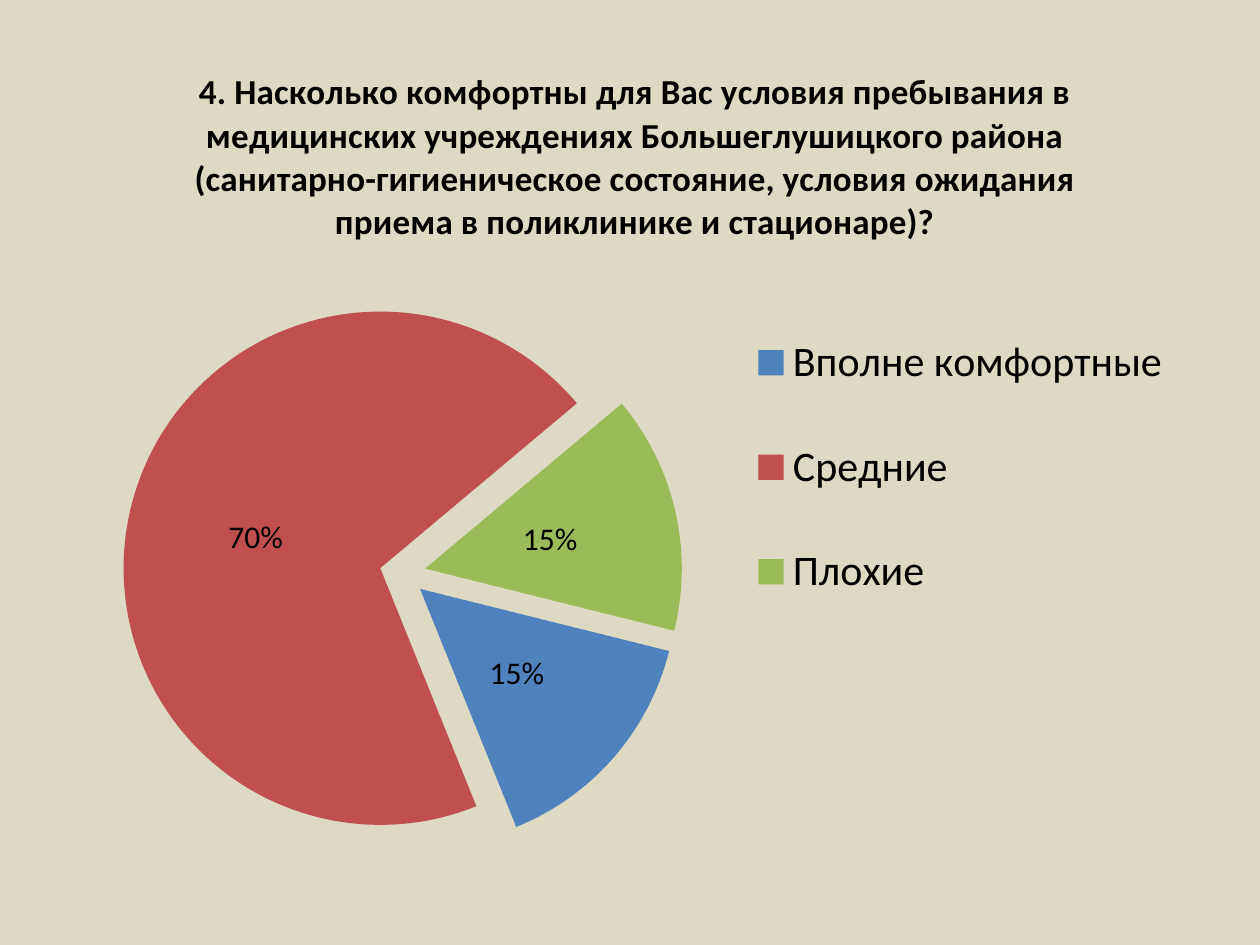
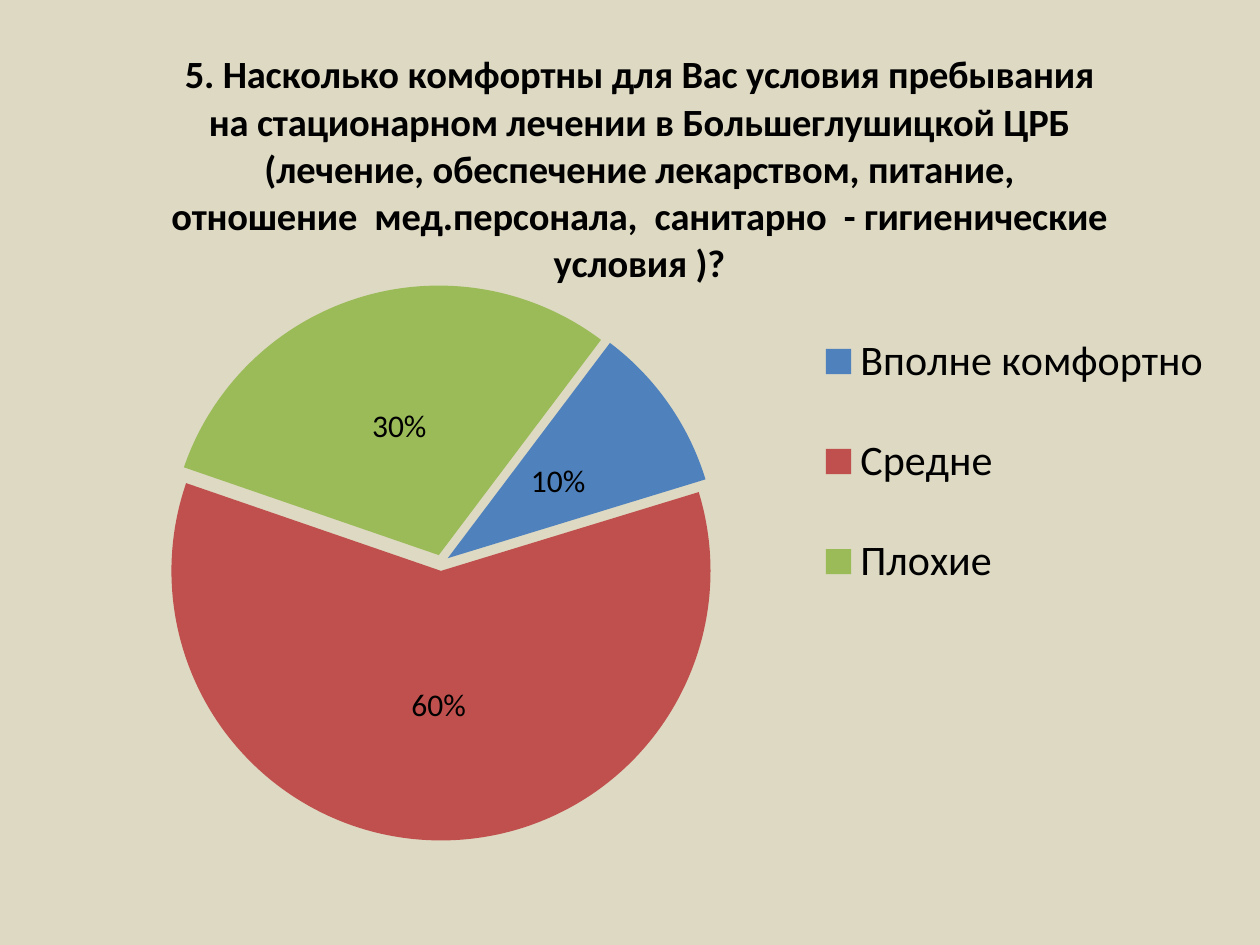
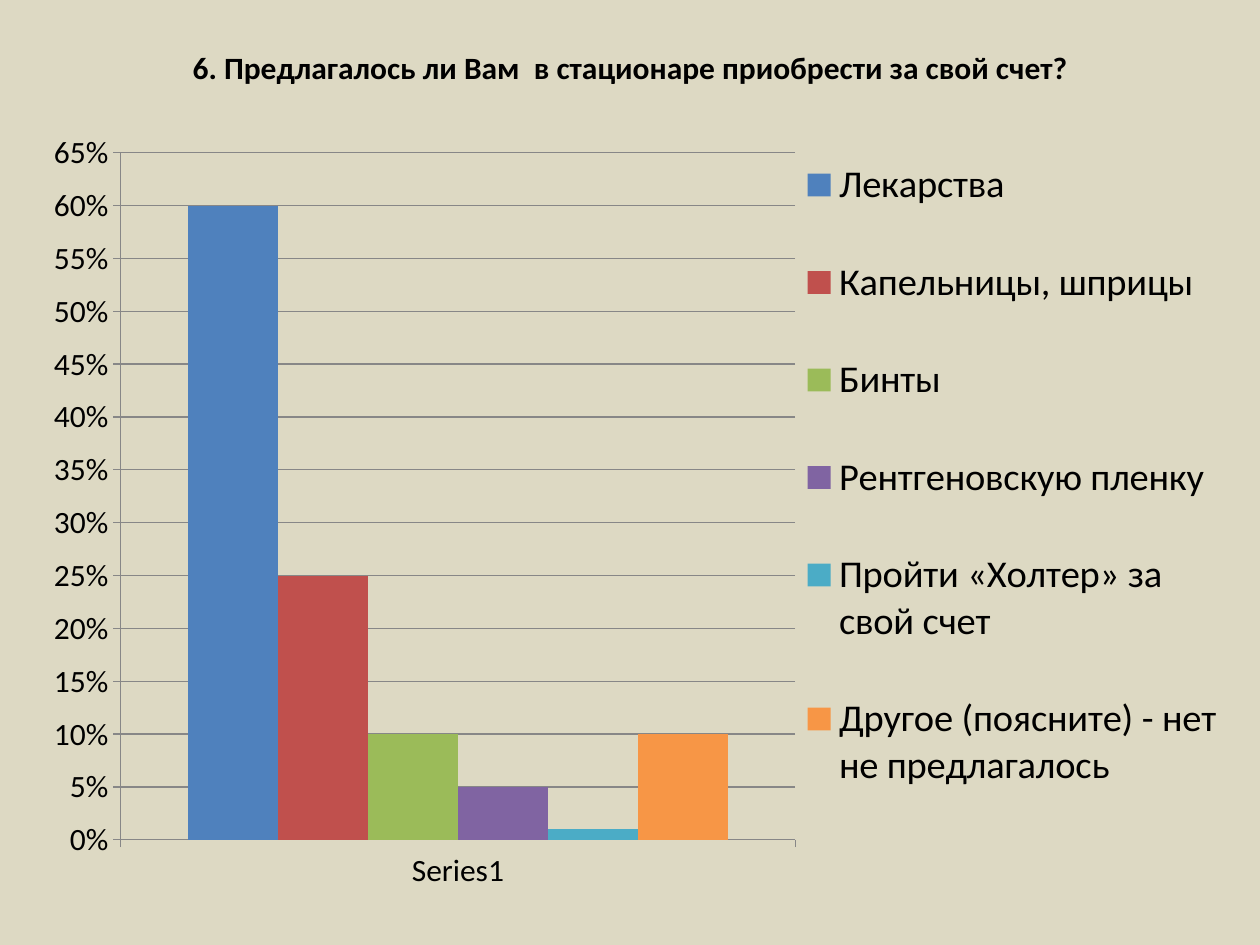
import pptx
import pptx.util
import pptx.dml.color
import pptx.chart.data
import pptx.enum.chart
import pptx.oxml.ns
from lxml import etree

Pt = pptx.util.Pt
qn = pptx.oxml.ns.qn
XL = pptx.enum.chart

# Shared look
FONT, TEXT, BACKGROUND, AXIS = "Calibri", "000000", "DDD9C3", "878787"
PALETTE = ["4F81BD", "C0504D", "9BBB59", "8064A2", "4BACC6", "F79646"]
BODY_SIZE = 18

# Content: box is left, top, width, height in points;
# plot and legend are x, y, width, height as shares of the chart
PIES = [
    dict(title="4. Насколько комфортны для Вас условия пребывания в медицинских "
               "учреждениях Большеглушицкого района (санитарно-гигиеническое "
               "состояние, условия ожидания приема в поликлинике и стационаре)?",
         title_size=20, legend_size=24, box=(36.72, 20.88, 652.32, 487.44),
         plot=(0.051, 0.302, 0.491, 0.656), legend=(0.59, 0.29, 0.39, 0.43),
         start=104, explosion=9,
         answers=[("Вполне комфортные", 0.15), ("Средние", 0.7), ("Плохие", 0.15)]),
    dict(title="5. Насколько комфортны для Вас условия пребывания на стационарном "
               "лечении в Большеглушицкой ЦРБ (лечение, обеспечение лекарством, "
               "питание, отношение  мед.персонала,  санитарно  - гигиенические "
               "условия )?",
         title_size=22, legend_size=24, box=(25.2, 9.36, 680.4, 498.96),
         plot=(0.1, 0.308, 0.467, 0.636), legend=(0.64, 0.31, 0.35, 0.4),
         start=37, explosion=3,
         answers=[("Вполне комфортно", 0.1), ("Средне", 0.6), ("Плохие", 0.3)]),
]
PURCHASES = dict(
    title="6. Предлагалось ли Вам  в стационаре приобрести за свой счет?",
    title_size=18, legend_size=22, box=(14.4, 9.36, 691.92, 498.96),
    plot=(0.079, 0.159, 0.557, 0.801), legend=(0.635, 0.11, 0.36, 0.85),
    category="Series1",
    answers=[("Лекарства", 0.6), ("Капельницы, шприцы", 0.25), ("Бинты", 0.1),
             ("Рентгеновскую пленку", 0.05), ("Пройти «Холтер» за свой счет", 0.01),
             ("Другое (поясните) - нет не предлагалось", 0.1)])


def rgb(color):
    return pptx.dml.color.RGBColor.from_string(color)


def style_font(font, size, bold=False):
    font.name, font.size, font.bold = FONT, Pt(size), bold
    font.color.rgb = rgb(TEXT)


def paint(fmt, color):
    fmt.fill.solid()
    fmt.fill.fore_color.rgb = rgb(color)


def manual_layout(parent, index, shares, inner=False):
    for old in parent.findall(qn("c:layout")):
        parent.remove(old)
    layout = etree.Element(qn("c:layout"))
    manual = etree.SubElement(layout, qn("c:manualLayout"))
    settings = [("layoutTarget", "inner")] if inner else []
    settings += [("xMode", "edge"), ("yMode", "edge")]
    settings += zip("xywh", shares)
    for tag, value in settings:
        etree.SubElement(manual, qn("c:" + tag)).set("val", str(value))
    parent.insert(index, layout)


def add_question(prs, kind, data, question):
    """Add a slide holding one titled chart with a legend."""
    s = prs.slides.add_slide(prs.slide_layouts[6])
    paint(s.background, BACKGROUND)
    box = [Pt(v) for v in question["box"]]
    chart = s.shapes.add_chart(kind, *box, data).chart
    style_font(chart.font, BODY_SIZE)

    # Title
    chart.has_title = True
    r = chart.chart_title.text_frame.paragraphs[0].add_run()
    r.text = question["title"]
    style_font(r.font, question["title_size"], bold=True)

    # Legend and plot area
    chart.has_legend = True
    chart.legend.position = XL.XL_LEGEND_POSITION.RIGHT
    chart.legend.include_in_layout = False
    style_font(chart.legend.font, question["legend_size"])
    manual_layout(chart.legend._element, 1, question["legend"])
    plot_area = chart._chartSpace.find(".//" + qn("c:plotArea"))
    manual_layout(plot_area, 0, question["plot"], inner=True)
    return chart


def add_pie(prs, question):
    names, values = zip(*question["answers"])
    data = pptx.chart.data.CategoryChartData(number_format="0%")
    data.categories = names
    data.add_series(question["title"], values)
    plot = add_question(prs, XL.XL_CHART_TYPE.PIE, data, question).plots[0]
    series = plot.series[0]

    # Slices
    for i, color in enumerate(PALETTE[:len(values)]):
        paint(series.points[i].format, color)
    explosion = etree.Element(qn("c:explosion"))
    explosion.set("val", str(question["explosion"]))
    series._element.find(qn("c:tx")).addnext(explosion)

    # Value labels
    labels = series.data_labels
    labels.show_value = True
    labels.number_format, labels.number_format_is_linked = "0%", False
    labels.position = XL.XL_LABEL_POSITION.CENTER
    style_font(labels.font, BODY_SIZE)

    # Start angle
    pie = plot._element
    for old in pie.findall(qn("c:firstSliceAng")):
        pie.remove(old)
    etree.SubElement(pie, qn("c:firstSliceAng")).set("val", str(question["start"]))


def add_columns(prs, question):
    data = pptx.chart.data.CategoryChartData(number_format="0%")
    data.categories = [question["category"]]
    for name, value in question["answers"]:
        data.add_series(name, [value])
    chart = add_question(prs, XL.XL_CHART_TYPE.COLUMN_CLUSTERED, data, question)
    chart.chart_title.include_in_layout = True
    plot = chart.plots[0]
    plot.gap_width, plot.overlap, plot.vary_by_categories = 150, 0, False
    for series, color in zip(plot.series, PALETTE):
        paint(series.format, color)

    # Axes
    values = chart.value_axis
    values.minimum_scale, values.maximum_scale, values.major_unit = 0, 0.65, 0.05
    values.has_major_gridlines = True
    values.major_gridlines.format.line.color.rgb = rgb(AXIS)
    values.tick_labels.number_format = "0%"
    values.tick_labels.number_format_is_linked = False
    for axis in (chart.category_axis, values):
        axis.major_tick_mark = XL.XL_TICK_MARK.OUTSIDE
        axis.format.line.color.rgb = rgb(AXIS)
        style_font(axis.tick_labels.font, BODY_SIZE)


def main():
    prs = pptx.Presentation()
    prs.slide_width, prs.slide_height = Pt(720), Pt(540)
    for question in PIES:
        add_pie(prs, question)
    add_columns(prs, PURCHASES)
    prs.save("out.pptx")


if __name__ == "__main__":
    main()
